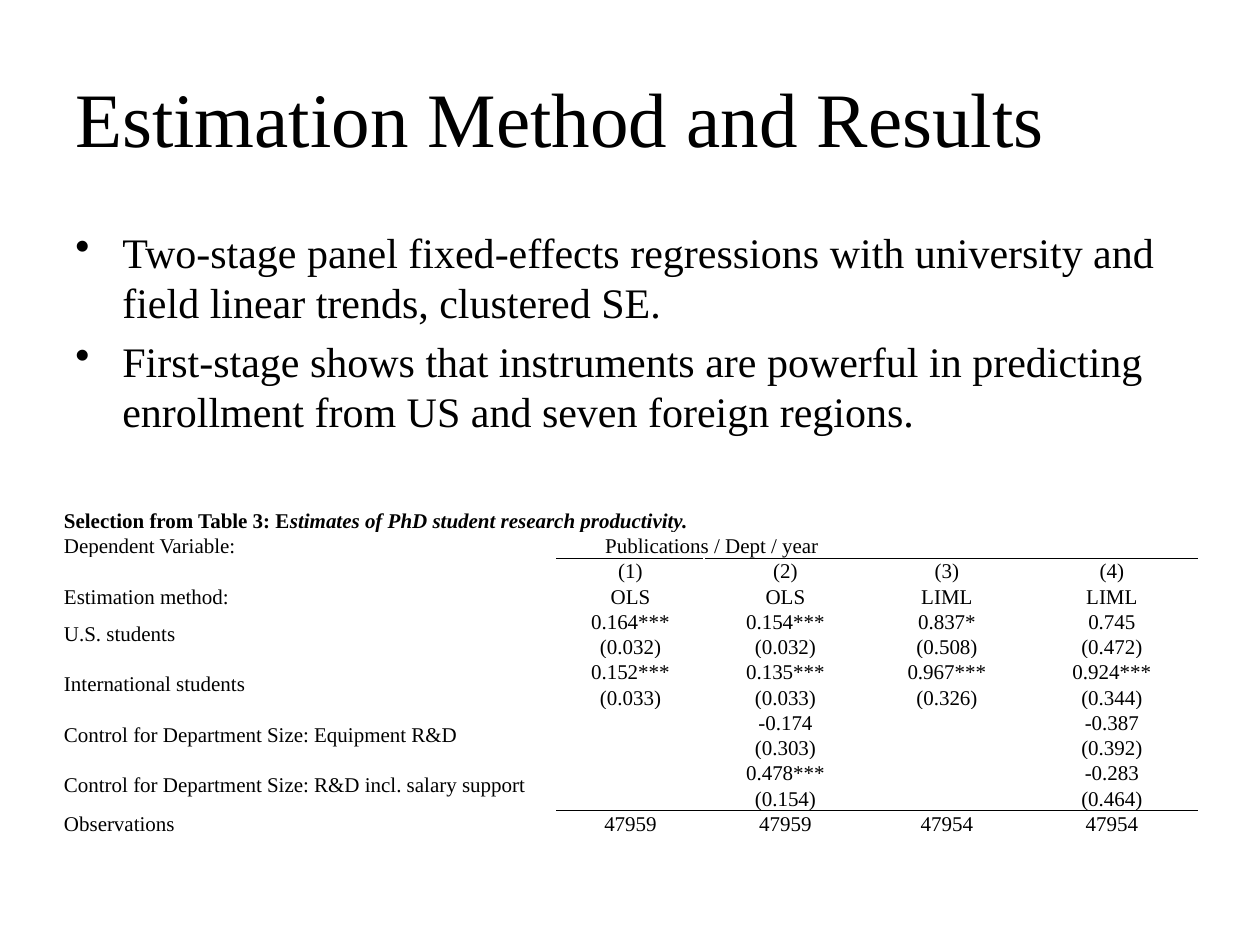
from lxml import etree
from pptx import Presentation
from pptx.dml.color import RGBColor
from pptx.enum.text import MSO_ANCHOR, PP_ALIGN
from pptx.oxml.ns import qn
from pptx.util import Emu, Pt

EMU_PER_PX = 914400 // 126
BLACK = RGBColor(0x00, 0x00, 0x00)
FONT = "Times New Roman"
TOP, MIDDLE, BOTTOM = MSO_ANCHOR.TOP, MSO_ANCHOR.MIDDLE, MSO_ANCHOR.BOTTOM
LEFT, CENTER = PP_ALIGN.LEFT, PP_ALIGN.CENTER

BULLETS = [
    "Two-stage panel fixed-effects regressions with university and "
    "field linear trends, clustered SE.",
    "First-stage shows that instruments are powerful in predicting "
    "enrollment from US and seven foreign regions.",
]
COLUMN_WIDTHS = [494, 147, 42, 121, 160, 170]
VALUE_COLUMNS = [1, 2, 4, 5]
CAPTION_HEIGHT = 39
ROW_PITCH = 24.5
CAPTION = [("Selection from Table 3: E", False),
           ("stimates of PhD student research productivity.", True)]
# Label, then the values of models (1) to (4); a label of None continues the row above.
RESULTS = [
    ("", "(1)", "(2)", "(3)", "(4)"),
    ("Estimation method:", "OLS", "OLS", "LIML", "LIML"),
    ("U.S. students", "0.164***", "0.154***", "0.837*", "0.745"),
    (None, "(0.032)", "(0.032)", "(0.508)", "(0.472)"),
    ("International students", "0.152***", "0.135***", "0.967***", "0.924***"),
    (None, "(0.033)", "(0.033)", "(0.326)", "(0.344)"),
    ("Control for Department Size: Equipment R&D", "", "-0.174", "", "-0.387"),
    (None, "", "(0.303)", "", "(0.392)"),
    ("Control for Department Size: R&D incl. salary support",
     "", "0.478***", "", "-0.283"),
    (None, "", "(0.154)", "", "(0.464)"),
    ("Observations", "47959", "47959", "47954", "47954"),
]
FIRST_RESULT_ROW = 2
RULED_ROWS = [1, 11]


def px(length):
    return Emu(length * EMU_PER_PX)


class SlideBuilder:
    def __init__(self, slide):
        self.slide = slide

    def style(self, paragraph, size, align=LEFT):
        paragraph.alignment = align
        font = paragraph.font
        font.name, font.size = FONT, Pt(size)
        font.color.rgb = BLACK

    def text_box(self, left, top, width, height, texts, size, anchor=TOP):
        box = self.slide.shapes.add_textbox(px(left), px(top), px(width), px(height))
        frame = box.text_frame
        frame.word_wrap = True
        frame.vertical_anchor = anchor
        frame.text = "\n".join(texts)
        for paragraph in frame.paragraphs:
            self.style(paragraph, size)
        return frame

    def bullet_list(self, left, top, width, height, texts, size):
        frame = self.text_box(left, top, width, height, texts, size)
        for paragraph in frame.paragraphs:
            paragraph.space_before = Pt(size * 0.2)
            properties = paragraph._p.get_or_add_pPr()
            properties.set("marL", str(px(47)))
            properties.set("indent", str(px(-47)))
            bullet = etree.Element(qn("a:buChar"), char="•")
            properties.find(qn("a:defRPr")).addprevious(bullet)

    def table(self, left, top, column_widths, row_heights):
        """Add a plain table whose cells have no fill and no banded style."""
        frame = self.slide.shapes.add_table(
            len(row_heights), len(column_widths), px(left), px(top),
            px(sum(column_widths)), px(sum(row_heights)))
        table = frame.table
        table.first_row = table.horz_banding = False
        for column, width in zip(table.columns, column_widths):
            column.width = px(width)
        for row, height in zip(table.rows, row_heights):
            row.height = px(height)
        for cell in table.iter_cells():
            cell.fill.background()
            cell.margin_left = cell.margin_right = px(1)
            cell.margin_top = cell.margin_bottom = 0
            paragraph = cell.text_frame.paragraphs[0]
            self.style(paragraph, 12)
            etree.SubElement(paragraph._p, qn("a:endParaRPr"), sz="1200")
        return table

    def cell_text(self, cell, runs, align=LEFT, anchor=BOTTOM, bold=False):
        """Write (text, italic) runs into a cell."""
        cell.vertical_anchor = anchor
        paragraph = cell.text_frame.paragraphs[0]
        paragraph.alignment = align
        paragraph.font.bold = bold
        for text, italic in runs:
            run = paragraph.add_run()
            run.text = text
            if italic:
                run.font.italic = True

    def cell_rule(self, cell, side):
        """Draw a thin black border; side is lnT or lnB."""
        line = etree.Element(qn(f"a:{side}"), w=str(Pt(0.5)))
        fill = etree.SubElement(line, qn("a:solidFill"))
        etree.SubElement(fill, qn("a:srgbClr"), val=str(BLACK))
        cell._tc.get_or_add_tcPr().insert(0, line)

    def results_table(self, left, top):
        edges = [int(ROW_PITCH * index) for index in range(len(RESULTS) + 2)]
        heights = [CAPTION_HEIGHT] + [b - a for a, b in zip(edges, edges[1:])]
        table = self.table(left, top, COLUMN_WIDTHS, heights)

        for row in (0, 1):
            table.cell(row, row).merge(table.cell(row, row + 2))
        self.cell_text(table.cell(0, 0), CAPTION, bold=True)
        self.cell_text(table.cell(1, 0), [("Dependent Variable:", False)])
        self.cell_text(table.cell(1, 1), [("Publications / Dept / year", False)], CENTER)

        for row, (label, *values) in enumerate(RESULTS, FIRST_RESULT_ROW):
            table.cell(row, 2).merge(table.cell(row, 3))
            if label is None:
                label_cell = table.cell(row - 1, 0)
                label_cell.merge(table.cell(row, 0))
                label_cell.vertical_anchor = MIDDLE
            elif label:
                self.cell_text(table.cell(row, 0), [(label, False)])
            for column, value in zip(VALUE_COLUMNS, values):
                if value:
                    self.cell_text(table.cell(row, column), [(value, False)], CENTER)

        for row in RULED_ROWS:
            for column in range(1, len(COLUMN_WIDTHS)):
                self.cell_rule(table.cell(row, column), "lnB")
                self.cell_rule(table.cell(row + 1, column), "lnT")


def main():
    presentation = Presentation()
    presentation.slide_width, presentation.slide_height = px(1260), px(945)
    builder = SlideBuilder(presentation.slides.add_slide(presentation.slide_layouts[6]))
    builder.text_box(63, 38, 1134, 157, ["Estimation Method and Results"], 44, MIDDLE)
    builder.bullet_list(63, 220, 1134, 624, BULLETS, 24)
    builder.results_table(63, 494)
    presentation.save("out.pptx")


if __name__ == "__main__":
    main()
